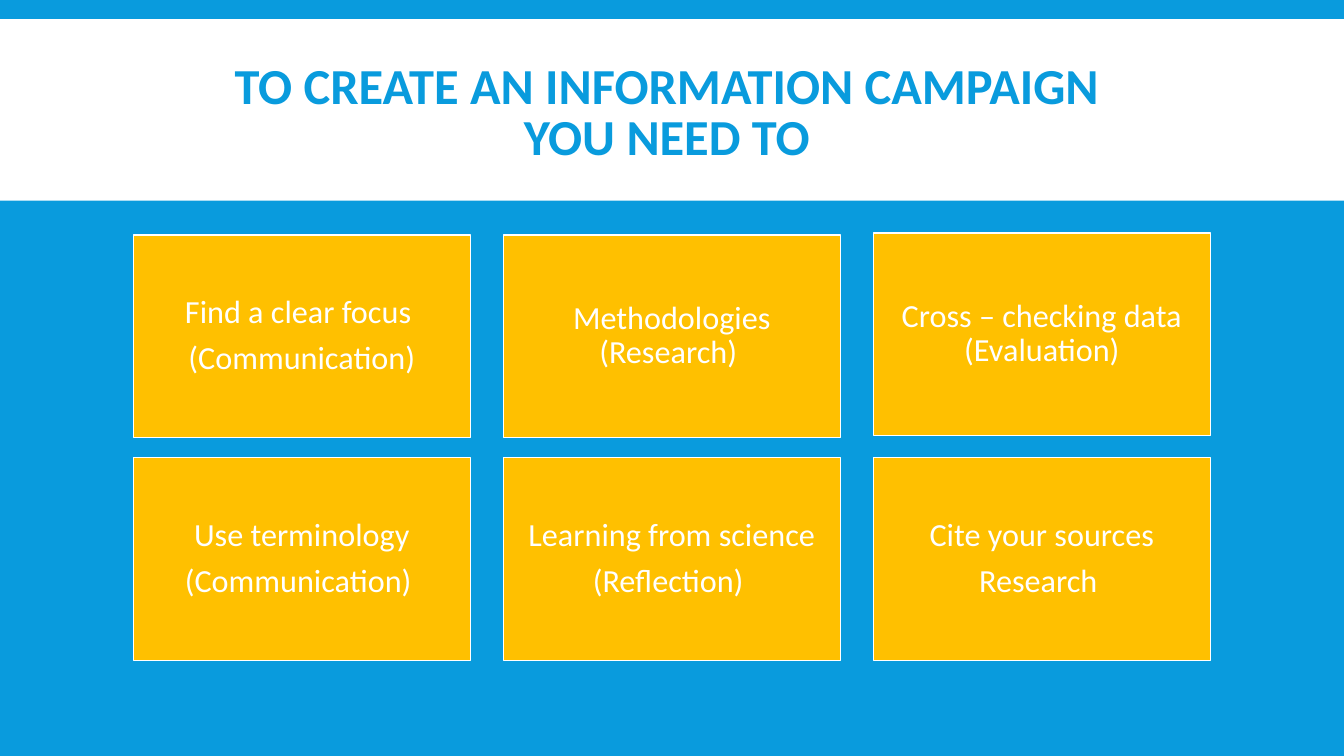
from pptx import Presentation
from pptx.dml.color import RGBColor
from pptx.enum.shapes import MSO_SHAPE
from pptx.enum.text import MSO_ANCHOR, MSO_AUTO_SIZE, PP_ALIGN
from pptx.util import Inches, Pt

RECT = MSO_SHAPE.RECTANGLE
MIDDLE = MSO_ANCHOR.MIDDLE
CENTER = PP_ALIGN.CENTER
FIXED = MSO_AUTO_SIZE.NONE

# Content: rows of cards, each card a list of paragraphs
TITLE = ["TO CREATE AN INFORMATION CAMPAIGN ", "YOU NEED TO "]
CARDS = [
    [["Find a clear focus ", "(Communication)"],
     ["Methodologies (Research) "],
     ["Cross – checking data (Evaluation)"]],
    [["Use terminology", "(Communication) "],
     ["Learning from science", "(Reflection) "],
     ["Cite your sources", "Research "]],
]
LIFT = {(0, 2): 0.02}  # the last card of the top row sits slightly higher
COLORS = {"blue": "099BDD", "white": "FFFFFF", "gold": "FFC000"}
FONT = "Calibri"

# Layout in inches
WIDE, HIGH = 13.33, 7.5
CARD_W, CARD_H = 3.34, 2.01
GAP_X, GAP_Y = 0.33, 0.2
TOP = 2.33
COLS = len(CARDS[0])
LEFT = (WIDE - COLS * CARD_W - (COLS - 1) * GAP_X) / 2


def color(name):
    return RGBColor.from_string(COLORS[name])


def add_rect(slide, x, y, w, h, fill):
    box = slide.shapes.add_shape(RECT, Inches(x), Inches(y), Inches(w), Inches(h))
    box.shadow.inherit = False
    box.fill.solid()
    box.fill.fore_color.rgb = color(fill)
    box.line.fill.background()
    return box


def add_run(para, text, size, tint, bold=False):
    run = para.add_run()
    run.text = text
    font = run.font
    font.name, font.size, font.bold = FONT, Pt(size), bold
    font.color.rgb = color(tint)


def add_card(slide, x, y, lines):
    card = add_rect(slide, x, y, CARD_W, CARD_H, "gold")
    card.line.color.rgb = color("white")
    card.line.width = Pt(1)
    frame = card.text_frame
    frame.word_wrap = True
    frame.vertical_anchor = MIDDLE
    frame.margin_left = frame.margin_right = Inches(0.1)
    frame.margin_top = frame.margin_bottom = Inches(0.1)
    for i, line in enumerate(lines):
        para = frame.add_paragraph() if i else frame.paragraphs[0]
        para.alignment = CENTER
        para.line_spacing = 0.9
        para.space_after = Pt(8)
        add_run(para, line, 23, "white")


def add_title(slide):
    title = slide.shapes.title
    title.left, title.top = Inches(1.32), Inches(0.31)
    title.width, title.height = Inches(10.7), Inches(1.65)
    frame = title.text_frame
    frame.word_wrap = True
    frame.auto_size = FIXED
    frame.vertical_anchor = MIDDLE
    para = frame.paragraphs[0]
    para.alignment = CENTER
    para.line_spacing = 0.85
    for i, line in enumerate(TITLE):
        if i:
            para.add_line_break()
        add_run(para, line, 36, "blue", True)


def main():
    deck = Presentation()
    deck.slide_width, deck.slide_height = Inches(WIDE), Inches(HIGH)
    slide = deck.slides.add_slide(deck.slide_layouts[5])
    slide.background.fill.solid()
    slide.background.fill.fore_color.rgb = color("blue")

    # White band, moved behind the title
    band = add_rect(slide, 0, 0.19, WIDE, 1.8, "white")
    slide.shapes.title._element.addprevious(band._element)
    add_title(slide)

    # Card grid
    for r, row in enumerate(CARDS):
        for c, lines in enumerate(row):
            x = LEFT + c * (CARD_W + GAP_X)
            y = TOP + r * (CARD_H + GAP_Y) - LIFT.get((r, c), 0)
            add_card(slide, x, y, lines)

    deck.save("out.pptx")


if __name__ == "__main__":
    main()
